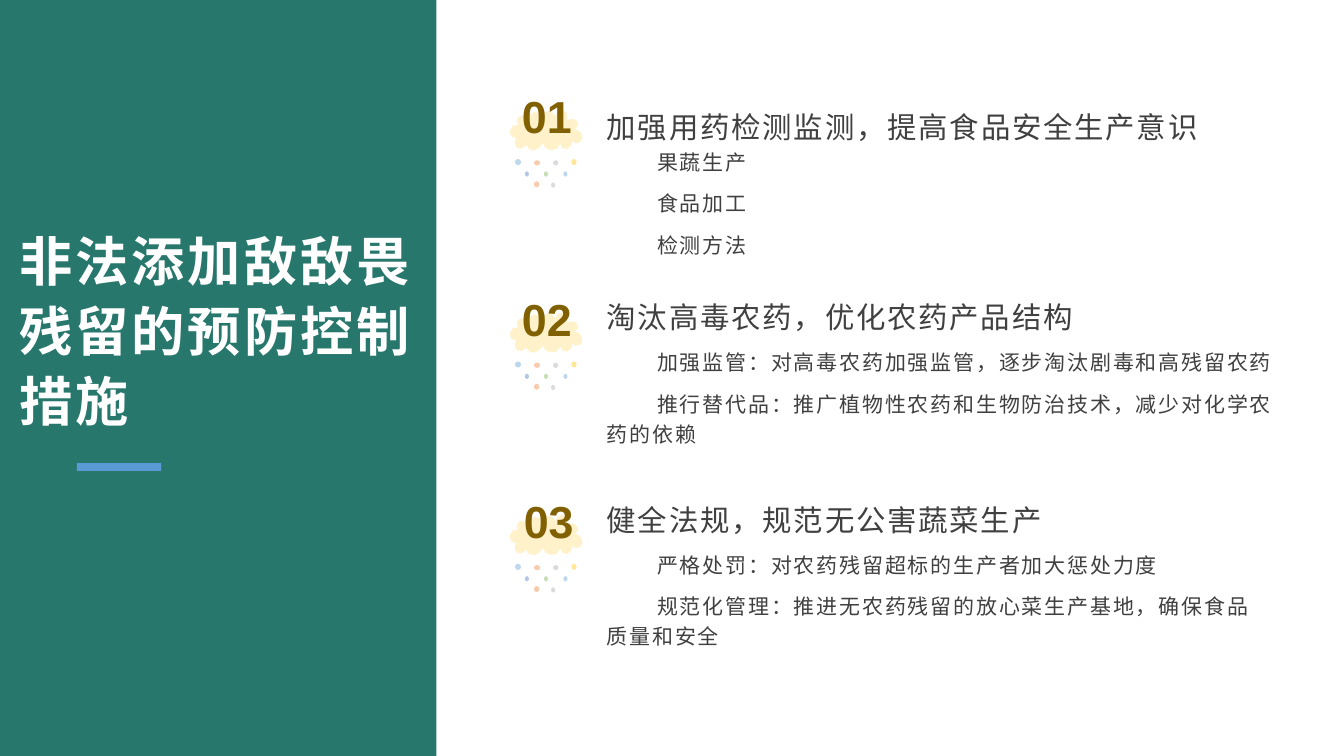
"""Builds a slide listing three measures against pesticide residues."""
from lxml import etree
from pptx import Presentation
from pptx import util as u
from pptx.dml.color import RGBColor
from pptx.enum import shapes, text
from pptx.oxml.ns import qn

GREEN = RGBColor(0x27, 0x77, 0x6D)
WHITE = RGBColor(0xFF, 0xFF, 0xFF)
BLUE = RGBColor(0x5B, 0x9B, 0xD5)
GREY = RGBColor(0x40, 0x40, 0x40)
BROWN = RGBColor(0x80, 0x60, 0x00)
YELLOW = RGBColor(0xFF, 0xE6, 0x99)
PERIWINKLE = RGBColor(0xB4, 0xC7, 0xE7)
SILVER = RGBColor(0xDB, 0xDB, 0xDB)
PEACH = RGBColor(0xF8, 0xCB, 0xAD)
LIME = RGBColor(0xC5, 0xE0, 0xB4)
SKY = RGBColor(0xBD, 0xD7, 0xEE)

CJK = "Noto Sans CJK SC"
STEP = 5.1
ICON_X, ICON_Y = 12.85, 2.77
TEXT_X, TEXT_W = 15.04, 17.15

CLOUD = [
    (52, 0),
    (49, 0, 46, 3, 45, 6), (44, 3, 41, 1, 38, 1), (35, 1, 32, 4, 33, 7),
    (31, 4, 28, 2, 24, 2), (21, 3, 18, 6, 18, 9), (17, 8, 15, 6, 13, 6),
    (11, 6, 9, 6, 8, 8), (6, 9, 7, 13, 8, 15), (4, 13, 1, 17, 0, 21),
    (0, 24, 1, 30, 6, 28), (4, 31, 4, 36, 7, 38), (10, 40, 15, 38, 16, 35),
    (17, 39, 21, 41, 25, 40), (28, 40, 31, 36, 33, 33), (33, 37, 37, 40, 41, 40),
    (45, 41, 49, 38, 50, 34), (50, 37, 54, 40, 57, 39), (60, 38, 63, 34, 62, 31),
    (63, 34, 67, 34, 70, 32), (72, 30, 73, 26, 71, 23), (69, 20, 66, 19, 63, 19),
    (65, 19, 66, 18, 67, 17), (68, 15, 68, 13, 67, 12), (66, 10, 64, 9, 62, 9),
    (60, 9, 58, 10, 56, 11), (56, 11, 57, 7, 57, 7), (58, 3, 55, 1, 52, 0),
]
CLOUD_UNIT = 1.85 / 73
DROPS = [
    (0.38, 1.55, 0.10, 0.13, PERIWINKLE), (1.04, 1.83, 0.10, 0.13, SILVER),
    (1.55, 1.24, 0.13, 0.15, YELLOW), (1.09, 1.27, 0.13, 0.13, SILVER),
    (0.61, 1.80, 0.13, 0.15, PEACH), (0.86, 1.55, 0.10, 0.13, LIME),
    (0.13, 1.24, 0.15, 0.15, SKY), (1.35, 1.55, 0.10, 0.13, SKY),
    (0.61, 1.27, 0.15, 0.13, PEACH),
]

HEADINGS = ["加强用药检测监测，提高食品安全生产意识",
            "淘汰高毒农药，优化农药产品结构",
            "健全法规，规范无公害蔬菜生产"]
MEASURES = [
    ["果蔬生产", "食品加工", "检测方法"],
    ["加强监管：对高毒农药加强监管，逐步淘汰剧毒和高残留农药",
     "推行替代品：推广植物性农药和生物防治技术，减少对化学农药的依赖"],
    ["严格处罚：对农药残留超标的生产者加大惩处力度",
     "规范化管理：推进无农药残留的放心菜生产基地，确保食品质量和安全"],
]


def write(tf, content, size, color, font=CJK, bold=False, spacing=1.3,
          line=1.0, after=0, indent=0, align=text.PP_ALIGN.LEFT):
    """Add one formatted paragraph to a text frame."""
    p = tf.paragraphs[0] if not tf.text else tf.add_paragraph()
    p.alignment, p.line_spacing = align, line
    p.space_before, p.space_after = u.Pt(0), u.Pt(after)
    pPr = p._p.get_or_add_pPr()
    pPr.set("marL", "0")
    pPr.set("indent", str(u.Cm(indent)))
    etree.SubElement(pPr, qn("a:buNone"))
    r = p.add_run()
    r.text = content
    r.font.size, r.font.bold, r.font.name = u.Pt(size), bold, font
    r.font.color.rgb = color
    rPr = r._r.get_or_add_rPr()
    rPr.set("spc", str(round(spacing * 100)))
    etree.SubElement(rPr, qn("a:ea")).set("typeface", font)


def flatten(curve):
    """Return the ends and midpoints along a chain of cubic curves."""
    points = [curve[0]]
    for x1, y1, x2, y2, x3, y3 in curve[1:]:
        x0, y0 = points[-1]
        middle = ((x0 + 3 * x1 + 3 * x2 + x3) / 8, (y0 + 3 * y1 + 3 * y2 + y3) / 8)
        points += [middle, (x3, y3)]
    return points


class Deck:
    """Holds the slide and draws its elements with lengths in centimetres."""

    def __init__(self):
        self.prs = Presentation()
        self.prs.slide_width, self.prs.slide_height = u.Cm(33.87), u.Cm(19.05)
        self.s = self.prs.slides.add_slide(self.prs.slide_layouts[4])

    def paint(self, sp, color, alpha=100):
        """Give a shape a flat fill without line or shadow."""
        sp.fill.solid()
        sp.fill.fore_color.rgb = color
        sp.line.fill.background()
        sp.shadow.inherit = False
        if alpha < 100:
            clr = sp._element.spPr.find(qn("a:solidFill"))[0]
            etree.SubElement(clr, qn("a:alpha")).set("val", str(alpha * 1000))

    def preset(self, parent, kind, x, y, w, h, color):
        """Draw a plain preset shape."""
        sp = parent.add_shape(kind, u.Cm(x), u.Cm(y), u.Cm(w), u.Cm(h))
        self.paint(sp, color)
        return sp

    def frame(self, sp, x, y, w, h, anchor=text.MSO_ANCHOR.TOP,
              insets=(0.25, 0.13, 0.25, 0.13)):
        """Place a text shape and return its text frame."""
        sp.left, sp.top, sp.width, sp.height = u.Cm(x), u.Cm(y), u.Cm(w), u.Cm(h)
        tf = sp.text_frame
        tf.word_wrap, tf.auto_size = True, text.MSO_AUTO_SIZE.NONE
        tf.vertical_anchor = anchor
        tf.margin_left, tf.margin_top, tf.margin_right, tf.margin_bottom = map(u.Cm, insets)
        return tf

    def box(self, parent, x, y, w, h, **layout):
        """Add a text box and return its text frame."""
        sp = parent.add_textbox(u.Cm(x), u.Cm(y), u.Cm(w), u.Cm(h))
        return self.frame(sp, x, y, w, h, **layout)

    def cloud(self, parent, x, y):
        """Draw a translucent cloud."""
        points = [(u.Cm(x + px * CLOUD_UNIT), u.Cm(y + py * CLOUD_UNIT))
                  for px, py in flatten(CLOUD)]
        builder = parent.build_freeform(*points[0])
        builder.add_line_segments(points[1:], close=True)
        self.paint(builder.convert_to_shape(), YELLOW, alpha=50)

    def icon(self, number, x, y, number_x):
        """Draw a rain cloud carrying a number."""
        group = self.s.shapes.add_group_shape().shapes
        self.cloud(group, x, y)
        for dx, dy, w, h, color in DROPS:
            self.preset(group, shapes.MSO_SHAPE.OVAL, x + dx, y + dy, w, h, color)
        tf = self.box(group, number_x, y - 0.84, 2.16, 1.98, anchor=text.MSO_ANCHOR.MIDDLE)
        write(tf, f"{number:02}", 32, BROWN, font="Arial", bold=True, spacing=0,
              align=text.PP_ALIGN.CENTER)


def main():
    """Build and save the slide."""
    deck = Deck()
    s = deck.s
    rectangle = shapes.MSO_SHAPE.RECTANGLE
    panel = deck.preset(s.shapes, rectangle, 0, 0, 11, 19.05, GREEN)
    s.shapes.element.insert(2, panel._element)
    tf = deck.frame(s.shapes.title, 0.3, 3.38, 10.39, 7.59,
                    anchor=text.MSO_ANCHOR.BOTTOM, insets=(0.18, 0.08, 0.18, 0.08))
    write(tf, "非法添加敌敌畏残留的预防控制措施", 38, WHITE, bold=True, spacing=2.2, line=1.1)
    deck.preset(s.shapes, rectangle, 1.94, 11.67, 2.12, 0.2, BLUE)

    *bodies, spare = list(s.placeholders)[1:]
    spare.element.getparent().remove(spare.element)
    for i, (body, heading, measures) in enumerate(zip(bodies, HEADINGS, MEASURES)):
        deck.icon(i + 1, ICON_X, ICON_Y + i * STEP, 12.75 if i == 2 else 12.7)
        if i == 0:
            tf = deck.frame(body, TEXT_X, 2.29, TEXT_W, 4.6, insets=(0.25, 0.1, 0.25, 0.71))
            write(tf, heading, 21, GREY, line=1.4)
        else:
            title = deck.box(s.shapes, TEXT_X, 2.32 + i * STEP, TEXT_W, 1.2)
            write(title, heading, 21, GREY)
            width = 17.75 if i == 1 else TEXT_W
            tf = deck.frame(body, TEXT_X, 3.46 + i * STEP, width, 3.45)
        for measure in measures:
            write(tf, measure, 15, GREY, line=1.2, after=8, indent=1.27)
    deck.prs.save("out.pptx")


if __name__ == "__main__":
    main()
